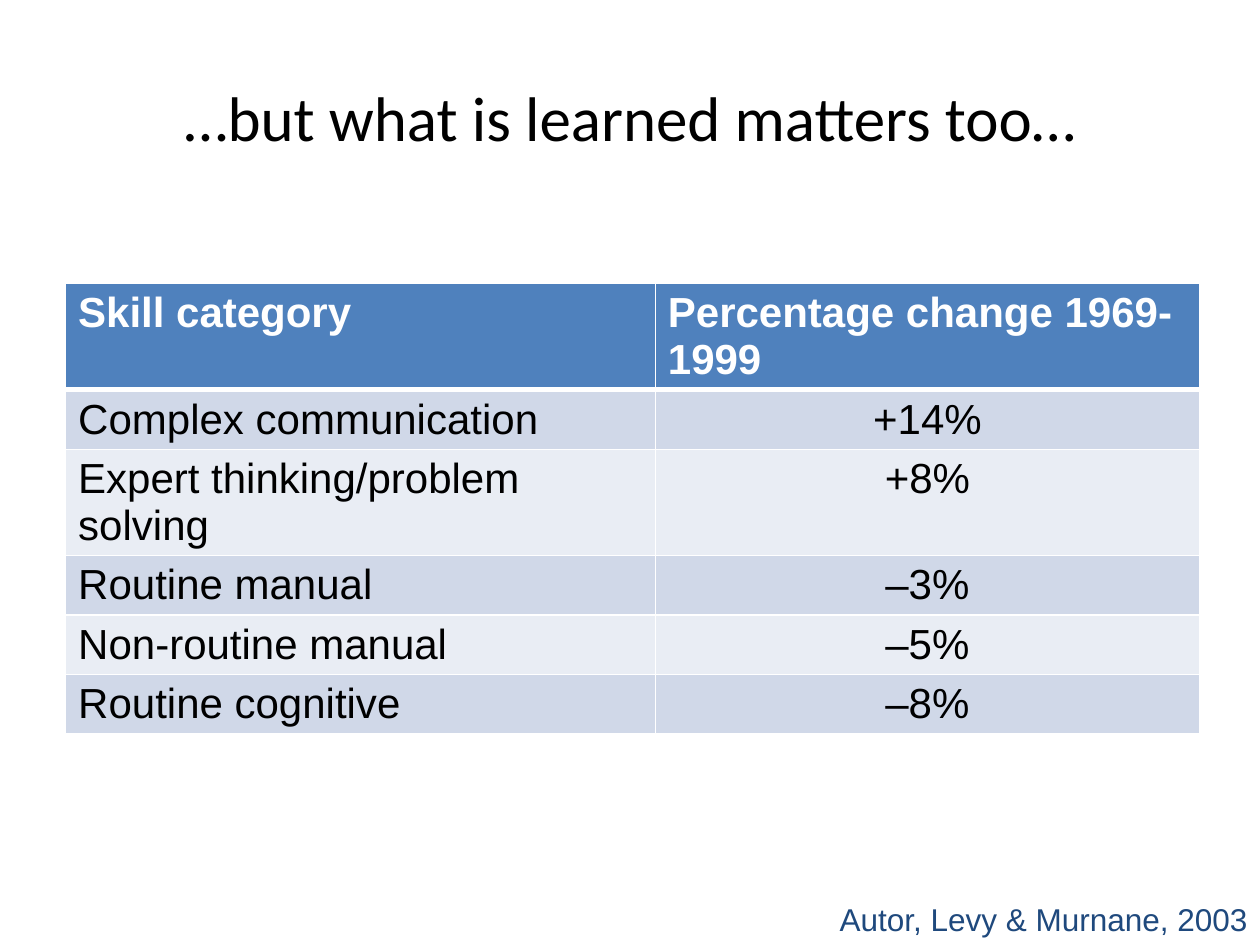
from dataclasses import dataclass

from lxml.etree import SubElement
from pptx import Presentation
from pptx.dml.color import RGBColor as Color
from pptx.enum.text import MSO_ANCHOR as Anchor, MSO_AUTO_SIZE as AutoSize, PP_ALIGN as Align
from pptx.oxml.ns import qn
from pptx.util import Pt


@dataclass(frozen=True)
class Theme:
    title_font: str = "Calibri"
    body_font: str = "Arial"
    title_size: int = 36
    table_size: int = 24
    source_size: int = 18
    ink: str = "000000"
    paper: str = "FFFFFF"
    header: str = "4F81BD"
    bands: tuple = ("D0D8E8", "E9EDF4")
    source: str = "1F497D"


class SlideBuilder:
    def __init__(self, page, theme):
        self.page = page
        self.theme = theme

    def set_text(self, frame, text, name, size, color, align, bold=False):
        para = frame.paragraphs[0]
        para.text = text
        para.alignment = align
        font = para.font
        font.name, font.size, font.bold = name, Pt(size), bold
        font.color.rgb = Color.from_string(color)

    def title(self, text, left, top, width, height):
        box = self.page.shapes.title
        box.left, box.top, box.width, box.height = map(Pt, (left, top, width, height))
        box.text_frame.vertical_anchor = Anchor.MIDDLE
        theme = self.theme
        self.set_text(box.text_frame, text, theme.title_font, theme.title_size, theme.ink, Align.CENTER)

    def border(self, cell, side, width):
        properties = cell._tc.get_or_add_tcPr()
        line = SubElement(properties, qn(f"a:ln{side}"), w=str(Pt(width)))
        fill = SubElement(line, qn("a:solidFill"))
        SubElement(fill, qn("a:srgbClr"), val=self.theme.paper)

    def table(self, rows, left, top, height, column_widths, row_height):
        theme = self.theme
        frame = self.page.shapes.add_table(
            len(rows), len(column_widths), Pt(left), Pt(top), Pt(sum(column_widths)), Pt(height)
        )
        table = frame.table
        for column, width in zip(table.columns, column_widths):
            column.width = Pt(width)
        for r, values in enumerate(rows):
            table.rows[r].height = Pt(row_height)
            is_header = r == 0
            background = theme.header if is_header else theme.bands[(r - 1) % 2]
            for c, text in enumerate(values):
                cell = table.cell(r, c)
                for side in "LRTB":
                    is_rule = (is_header and side == "B") or (r == 1 and side == "T")
                    self.border(cell, side, 3 if is_rule else 1)
                cell.fill.solid()
                cell.fill.fore_color.rgb = Color.from_string(background)
                self.set_text(
                    cell.text_frame,
                    text,
                    theme.body_font,
                    theme.table_size,
                    theme.paper if is_header else theme.ink,
                    Align.CENTER if c and not is_header else Align.LEFT,
                    is_header,
                )
        frame.height = Pt(height)

    def source(self, text, left, top, width, height):
        box = self.page.shapes.add_textbox(Pt(left), Pt(top), Pt(width), Pt(height))
        frame = box.text_frame
        frame.word_wrap = True
        frame.auto_size = AutoSize.SHAPE_TO_FIT_TEXT
        theme = self.theme
        self.set_text(frame, text, theme.body_font, theme.source_size, theme.source, Align.RIGHT)


SKILLS = [
    ("Skill category", "Percentage change 1969-1999"),
    ("Complex communication", "+14%"),
    ("Expert thinking/problem solving", "+8%"),
    ("Routine manual", "–3%"),
    ("Non-routine manual", "–5%"),
    ("Routine cognitive", "–8%"),
]


def main():
    deck = Presentation()
    deck.slide_width, deck.slide_height = Pt(720), Pt(540)
    page = deck.slides.add_slide(deck.slide_layouts[5])
    builder = SlideBuilder(page, Theme())
    builder.title("…but what is learned matters too…", 36, 21.6, 648, 90)
    builder.table(SKILLS, 37.5, 162, 216, (337, 311), 29.5)
    builder.source("Autor, Levy & Murnane, 2003", 462, 511, 258, 29)
    deck.save("out.pptx")


if __name__ == "__main__":
    main()
